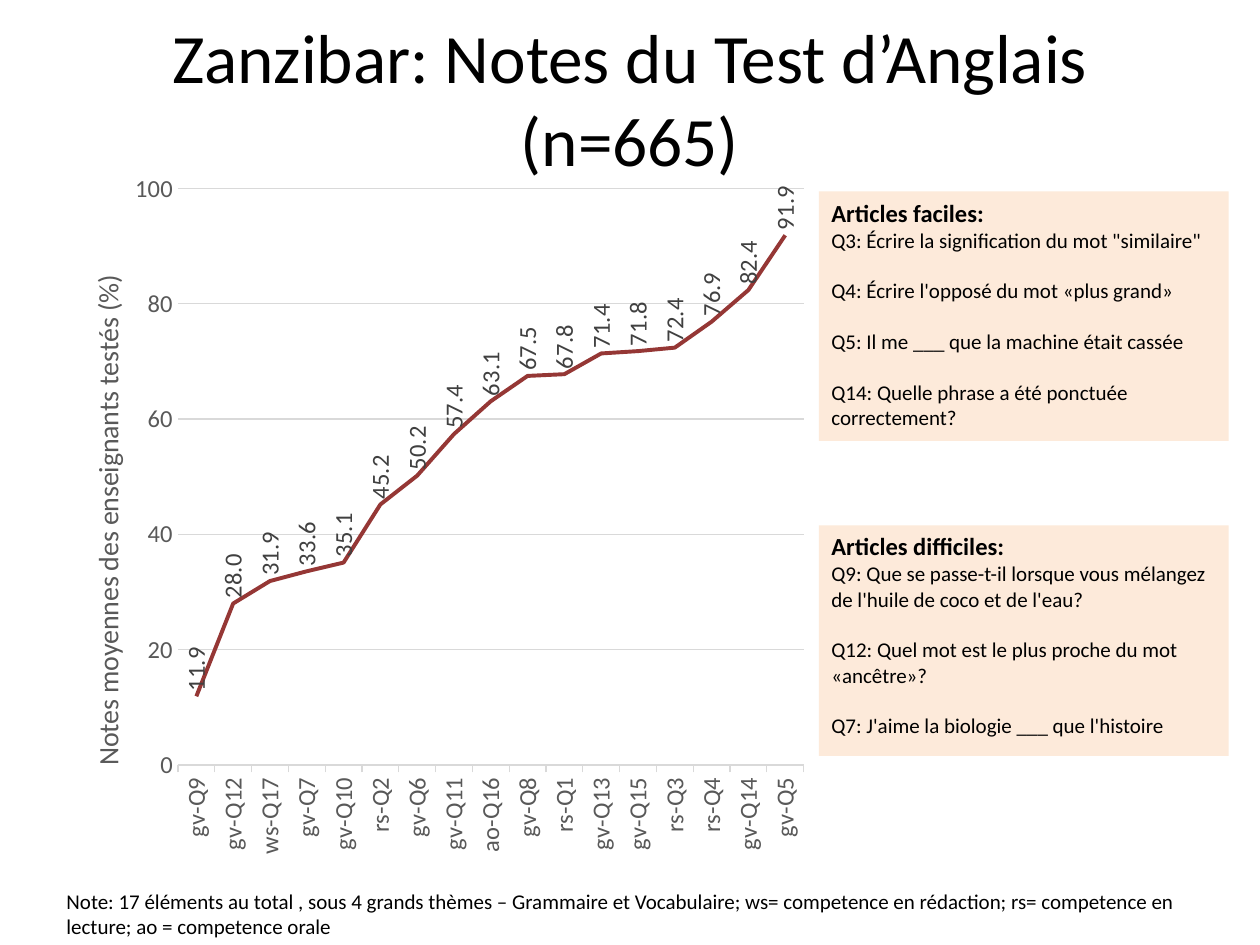
from lxml.etree import SubElement
from pptx import Presentation
from pptx.chart.data import CategoryChartData
from pptx.dml.color import RGBColor
from pptx.enum.chart import XL_CHART_TYPE as ChartType, XL_LABEL_POSITION as LabelPosition
from pptx.enum.chart import XL_MARKER_STYLE as Marker, XL_TICK_MARK as Tick
from pptx.enum.shapes import MSO_SHAPE as Shape
from pptx.enum.text import MSO_ANCHOR as Anchor, PP_ALIGN as Align
from pptx.oxml.ns import qn
from pptx.util import Cm, Pt

COLORS = {
    "text": "000000",
    "axis": "595959",
    "label": "404040",
    "grid": "D9D9D9",
    "line": "953735",
    "panel": "FDEADA",
}


def write(frame, text, size=12, bold=False, align=Align.LEFT, before=0, first=True):
    para = frame.paragraphs[0] if first else frame.add_paragraph()
    para.alignment = align
    para.space_before = Pt(before)
    span = para.add_run()
    span.text = text
    span.font.name = "Calibri"
    span.font.size = Pt(size)
    span.font.bold = bold
    span.font.color.rgb = RGBColor.from_string(COLORS["text"])
    return span


def add_layout(layout, **values):
    manual = SubElement(layout, qn("c:manualLayout"))
    for tag, value in values.items():
        SubElement(manual, qn(f"c:{tag}")).set("val", str(value))


deck = Presentation()
deck.slide_width, deck.slide_height = Cm(25.4), Cm(19.05)
page = deck.slides.add_slide(deck.slide_layouts[6])

scores = {
    "gv-Q9": 11.9, "gv-Q12": 28.0, "ws-Q17": 31.9, "gv-Q7": 33.6,
    "gv-Q10": 35.1, "rs-Q2": 45.2, "gv-Q6": 50.2, "gv-Q11": 57.4,
    "ao-Q16": 63.1, "gv-Q8": 67.5, "rs-Q1": 67.8, "gv-Q13": 71.4,
    "gv-Q15": 71.8, "rs-Q3": 72.4, "rs-Q4": 76.9, "gv-Q14": 82.4,
    "gv-Q5": 91.9,
}
data = CategoryChartData()
data.categories = list(scores)
data.add_series("Series 1", list(scores.values()))
chart = page.shapes.add_chart(
    ChartType.LINE, Cm(1.07), Cm(3.18), Cm(15.44), Cm(14.17), data
).chart
chart.has_legend = False
chart.has_title = False
chart.font.name = "Calibri"
chart.font.size = Pt(10)

plot_area = chart.plots[0]._element.getparent()
layout = plot_area.find(qn("c:layout"))
if layout is None:
    layout = SubElement(plot_area, qn("c:layout"))
    plot_area.insert(0, layout)
add_layout(layout, layoutTarget="inner", xMode="edge", yMode="edge",
           x=0.163, y=0.044, w=0.817, h=0.82)

questions, percent = chart.category_axis, chart.value_axis
for axis in (questions, percent):
    axis.tick_labels.font.name = "Calibri"
    axis.tick_labels.font.size = Pt(14)
    axis.tick_labels.font.color.rgb = RGBColor.from_string(COLORS["axis"])
questions.major_tick_mark = Tick.OUTSIDE
questions.format.line.width = Pt(0.75)
questions.format.line.color.rgb = RGBColor.from_string(COLORS["grid"])
percent.minimum_scale, percent.maximum_scale, percent.major_unit = 0, 100, 20
percent.major_tick_mark = Tick.NONE
percent.tick_labels.number_format = "0"
percent.tick_labels.number_format_is_linked = False
percent.format.line.fill.background()
percent.major_gridlines.format.line.width = Pt(0.75)
percent.major_gridlines.format.line.color.rgb = RGBColor.from_string(COLORS["grid"])

title = percent.axis_title
heading = write(title.text_frame, "Notes moyennes des enseignants testés (%)", size=16, align=Align.CENTER)
heading.font.color.rgb = RGBColor.from_string(COLORS["axis"])
title_layout = title._element.find(qn("c:layout"))
if title_layout is None:
    title_layout = SubElement(title._element, qn("c:layout"))
    title._element.find(qn("c:tx")).addnext(title_layout)
add_layout(title_layout, xMode="edge", yMode="edge", x=0.04, y=0.16)

series = chart.plots[0].series[0]
series.smooth = False
series.marker.style = Marker.NONE
series.format.line.width = Pt(2.25)
series.format.line.color.rgb = RGBColor.from_string(COLORS["line"])
chart.plots[0].vary_by_categories = False
labels = series.data_labels
labels.show_value = True
labels.position = LabelPosition.ABOVE
labels.number_format = "0.0"
labels.number_format_is_linked = False
labels.font.name = "Calibri"
labels.font.size = Pt(14)
labels.font.color.rgb = RGBColor.from_string(COLORS["label"])

for part in (questions._element, labels._element, title._element):
    body = next(part.iter(qn("a:bodyPr")))
    body.set("rot", "-5400000")
    body.set("vert", "horz")

captions = [
    ("Zanzibar: Notes du Test d’Anglais (n=665)", (1.27, 0.76, 22.86, 2.41), 39.6, Align.CENTER, Anchor.MIDDLE),
    ("Note: 17 éléments au total , sous 4 grands thèmes – Grammaire et Vocabulaire; "
     "ws= competence en rédaction; rs= competence en lecture; ao = competence orale",
     (1.09, 17.78, 24.08, 1.27), 12, Align.LEFT, Anchor.TOP),
]
for text, bounds, size, align, anchor in captions:
    box = page.shapes.add_textbox(*map(Cm, bounds))
    box.text_frame.word_wrap = True
    box.text_frame.vertical_anchor = anchor
    write(box.text_frame, text, size=size, align=align)

panels = [
    ("Articles difficiles:", 10.59, 4.65, [
        "Q9: Que se passe-t-il lorsque vous mélangez de l'huile de coco et de l'eau?",
        "Q12: Quel mot est le plus proche du mot «ancêtre»?",
        "Q7: J'aime la biologie ___ que l'histoire",
    ]),
    ("Articles faciles:", 3.86, 5.03, [
        "Q3: Écrire la signification du mot \"similaire\"",
        "Q4: Écrire l'opposé du mot «plus grand»",
        "Q5: Il me ___ que la machine était cassée",
        "Q14: Quelle phrase a été ponctuée correctement?",
    ]),
]
for name, top, height, items in panels:
    panel = page.shapes.add_shape(Shape.RECTANGLE, Cm(16.51), Cm(top), Cm(8.26), Cm(height))
    panel.shadow.inherit = False
    panel.fill.solid()
    panel.fill.fore_color.rgb = RGBColor.from_string(COLORS["panel"])
    panel.line.fill.background()
    frame = panel.text_frame
    frame.word_wrap = True
    frame.vertical_anchor = Anchor.TOP
    write(frame, name, size=14, bold=True)
    for index, item in enumerate(items):
        write(frame, item, before=14.6 if index else 0, first=False)

deck.save("out.pptx")
